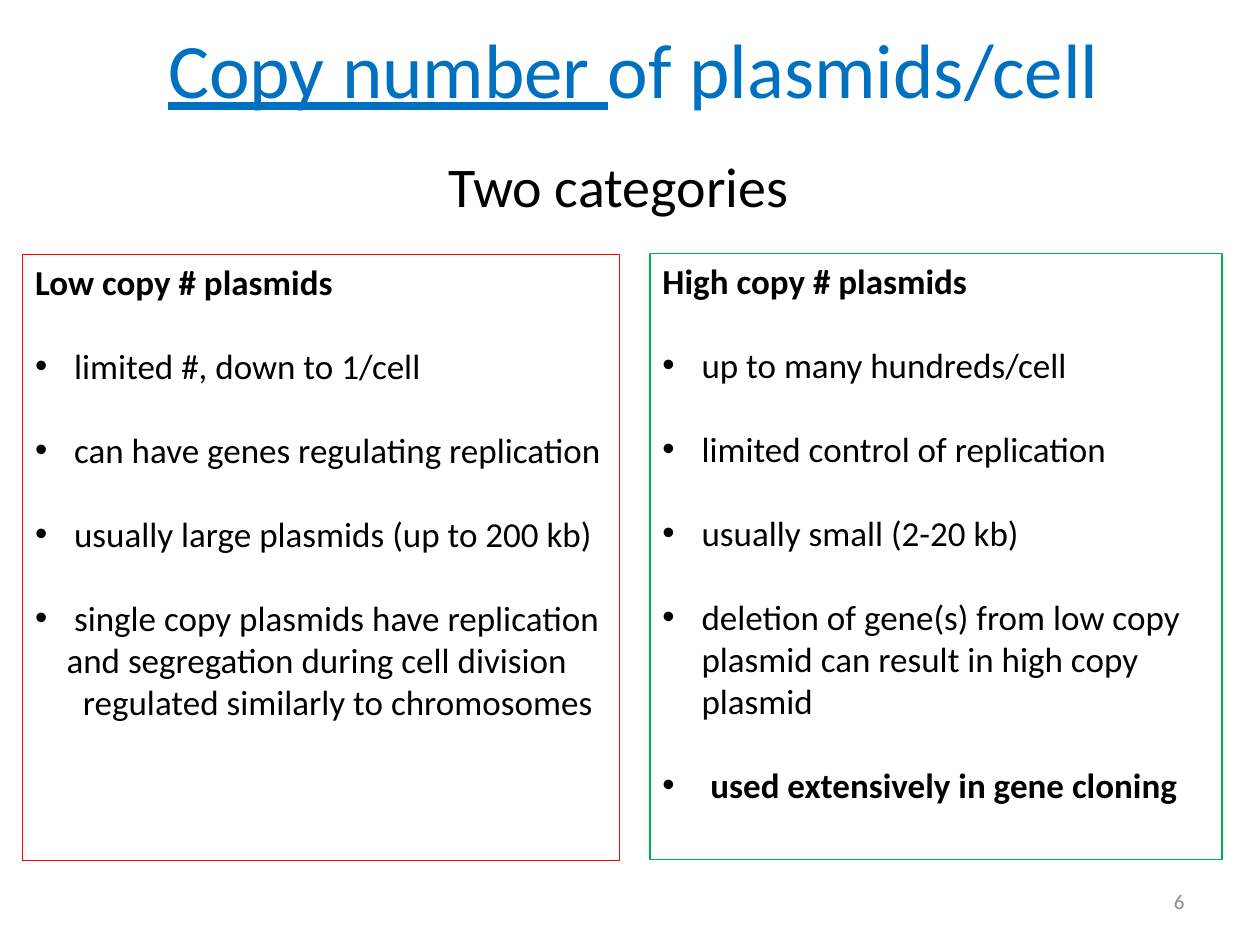
"""Build a slide comparing low and high copy number plasmids."""
from lxml import etree
from pptx import Presentation
from pptx.dml.color import RGBColor
from pptx.enum.shapes import MSO_SHAPE
from pptx.enum.text import MSO_ANCHOR, PP_ALIGN
from pptx.oxml.ns import qn
from pptx.util import Inches, Pt

RECT = MSO_SHAPE.RECTANGLE
TOP, MIDDLE = MSO_ANCHOR.TOP, MSO_ANCHOR.MIDDLE
LEFT, CENTER, RIGHT = PP_ALIGN.LEFT, PP_ALIGN.CENTER, PP_ALIGN.RIGHT
COLORS = {"title": "0070C0", "text": "000000", "number": "8C8C8C",
          "low": "FF0000", "high": "00B050"}
INDENT = 0.31
LINE_GAP = 24

# Each item: text, left margin, bulleted, bold
LOW_ITEMS = [
    ("limited #, down to 1/cell", INDENT, True, False),
    ("can have genes regulating replication", INDENT, True, False),
    ("usually large plasmids (up to 200 kb)", INDENT, True, False),
    ("single copy plasmids have replication", INDENT, True, False),
    ("and segregation during cell division", 0.25, False, False),
    ("regulated similarly to chromosomes", 0.38, False, False),
]
HIGH_ITEMS = [
    ("up to many hundreds/cell", INDENT, True, False),
    ("limited control of replication", INDENT, True, False),
    ("usually small (2-20 kb)", INDENT, True, False),
    ("deletion of gene(s) from low copy", INDENT, True, False),
    ("plasmid can result in high copy", INDENT, False, False),
    ("plasmid", INDENT, False, False),
    ("used extensively in gene cloning", 0.38, True, True),
]


def add_run(p, text, size=20, color="text", bold=False, underline=False):
    """Append a formatted run to a paragraph."""
    r = p.add_run()
    r.text = text
    r.font.name = "Calibri"
    r.font.size = Pt(size)
    r.font.bold = bold
    r.font.underline = underline
    r.font.color.rgb = RGBColor.from_string(COLORS[color])


def set_indent(p, margin, bullet):
    """Set a paragraph's left margin, with a hanging bullet if asked."""
    pPr = p._p.get_or_add_pPr()
    pPr.set("marL", str(Inches(margin)))
    pPr.set("indent", str(-Inches(margin) if bullet else 0))
    if bullet:
        font = etree.SubElement(pPr, qn("a:buFont"))
        font.set("typeface", "Arial")
        etree.SubElement(pPr, qn("a:buChar")).set("char", "•")


def add_label(slide, box, text, align=LEFT, anchor=TOP, wrap=True, **fmt):
    """Add a one-line text box."""
    tf = slide.shapes.add_textbox(*map(Inches, box)).text_frame
    tf.word_wrap = wrap
    tf.vertical_anchor = anchor
    p = tf.paragraphs[0]
    p.alignment = align
    add_run(p, text, **fmt)


def add_panel(slide, box, color, heading, items):
    """Add an outlined panel with a bold heading and spaced bullets."""
    sp = slide.shapes.add_shape(RECT, *map(Inches, box))
    sp.shadow.inherit = False
    sp.fill.background()
    sp.line.color.rgb = RGBColor.from_string(COLORS[color])
    sp.line.width = Pt(0.75)
    tf = sp.text_frame
    tf.word_wrap = True
    tf.vertical_anchor = TOP
    p = tf.paragraphs[0]
    p.alignment = LEFT
    add_run(p, heading, bold=True)
    for text, margin, bullet, bold in items:
        p = tf.add_paragraph()
        p.alignment = LEFT
        p.space_before = Pt(LINE_GAP if bullet else 0)
        set_indent(p, margin, bullet)
        add_run(p, text, bold=bold)


def add_title(slide, box):
    """Place the title and underline its key words."""
    title = slide.shapes.title
    title.left, title.top, title.width, title.height = map(Inches, box)
    title.text_frame.vertical_anchor = MIDDLE
    p = title.text_frame.paragraphs[0]
    p.alignment = CENTER
    add_run(p, "Copy number ", size=44, color="title", underline=True)
    add_run(p, "of plasmids/cell", size=44, color="title")


def main():
    """Create and save the slide."""
    prs = Presentation()
    prs.slide_width, prs.slide_height = Inches(10), Inches(7.5)
    slide = prs.slides.add_slide(prs.slide_layouts[5])
    add_title(slide, (0.53, -0.09, 9, 1.25))
    add_label(slide, (7.17, 6.95, 2.33, 0.4), "6", align=RIGHT,
              anchor=MIDDLE, size=12, color="number")
    add_panel(slide, (0.18, 2.02, 4.74, 4.81), "low",
              "Low copy # plasmids", LOW_ITEMS)
    add_panel(slide, (5.16, 2.01, 4.54, 4.81), "high",
              "High copy # plasmids", HIGH_ITEMS)
    add_label(slide, (3.46, 1.15, 2.93, 0.64), "Two categories",
              wrap=False, size=32)
    prs.save("out.pptx")


if __name__ == "__main__":
    main()
